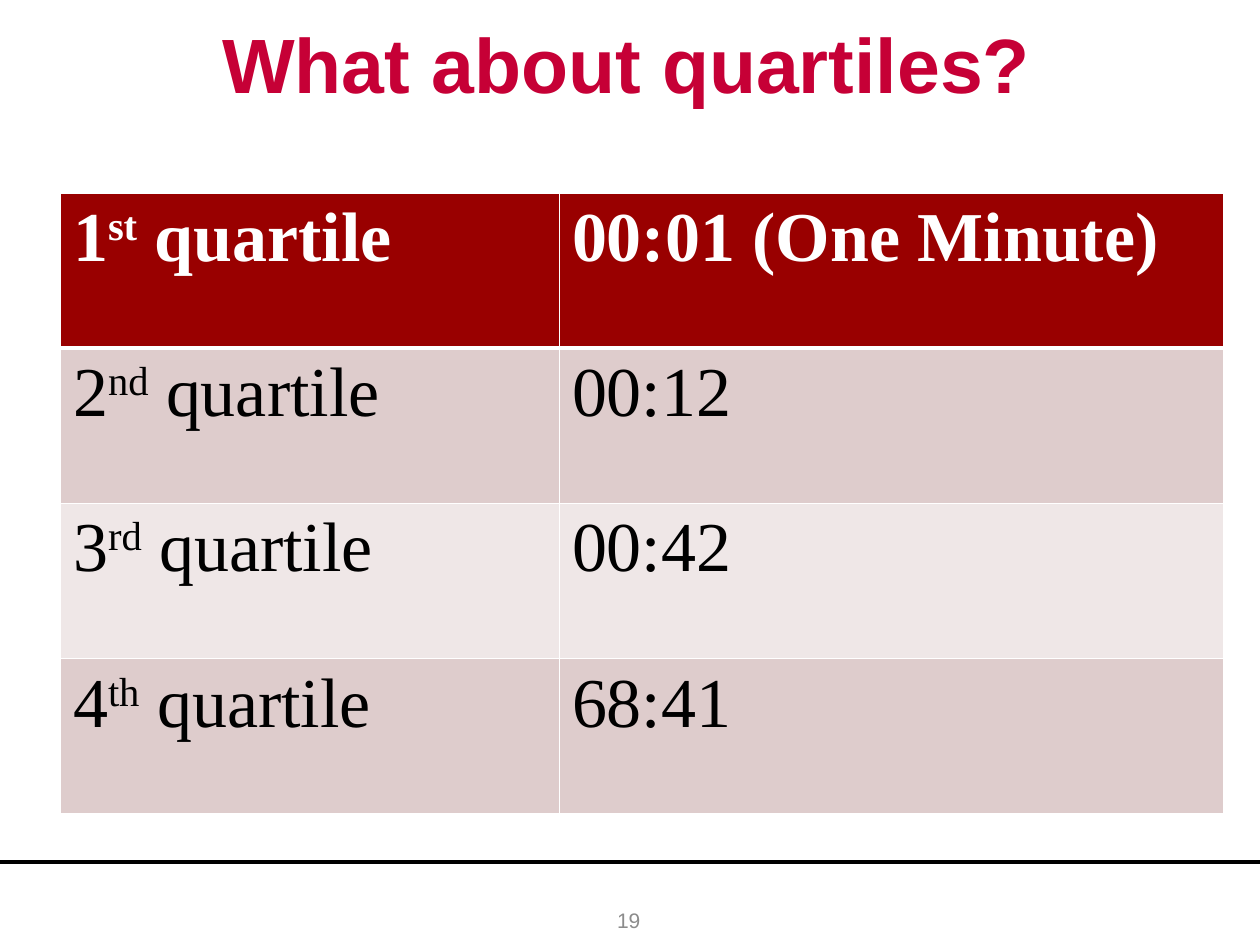
"""Build a slide with a table of quartile times."""
from lxml.etree import SubElement as Sub
from pptx import Presentation
from pptx.dml.color import RGBColor
from pptx.enum.shapes import MSO_CONNECTOR as Conn
from pptx.enum.text import MSO_ANCHOR as Anchor, PP_ALIGN as Align
from pptx.oxml.ns import qn
from pptx.util import Inches, Pt


def tint(color, code):
    color.rgb = RGBColor.from_string(code)


def write(para, text, style, code):
    run = para.add_run()
    run.text = text
    for key, value in style.items():
        setattr(run.font, key, value)
    tint(run.font.color, code)
    return run


deck = Presentation()
deck.slide_width, deck.slide_height = Inches(10), Inches(7.5)
slide = deck.slides.add_slide(deck.slide_layouts[5])
shapes = slide.shapes

rule = shapes.add_connector(Conn.STRAIGHT, 0, Inches(6.84), Inches(10), Inches(6.84))
rule.line.width = Pt(2.25)
tint(rule.line.color, "000000")
Sub(rule._element.spPr, qn("a:effectLst"))

title = shapes.title
title.left, title.top = Inches(-0.05), Inches(0)
title.width, title.height = Inches(10.05), Inches(1)
number = shapes.add_textbox(Inches(3.82), Inches(7.1), Inches(2.34), Inches(0.4))
labels = [
    (title, "What about quartiles?", {"name": "Arial", "size": Pt(44), "bold": True}, "C60036"),
    (number, "19", {"name": "Arial", "size": Pt(12)}, "8C8C8C"),
]
for box, text, style, code in labels:
    frame = box.text_frame
    frame.word_wrap = True
    frame.vertical_anchor = Anchor.MIDDLE
    para = frame.paragraphs[0]
    para.alignment = Align.CENTER
    write(para, text, style, code)

rows = [
    ("1", "st", "00:01 (One Minute)"),
    ("2", "nd", "00:12"),
    ("3", "rd", "00:42"),
    ("4", "th", "68:41"),
]
table = shapes.add_table(
    len(rows), 2, Inches(0.48), Inches(1.53), Inches(9.23), Inches(4.93)
).table
for col, width in zip(table.columns, (3.96, 5.27)):
    col.width = Inches(width)

for i, (rank, suffix, time) in enumerate(rows):
    head = i == 0
    fill = "990000" if head else ("EFE7E7", "DECCCC")[i % 2]
    ink = "FFFFFF" if head else "000000"
    style = {"name": "Times New Roman", "size": Pt(40), "bold": head}
    for j, parts in enumerate([(rank, suffix, " quartile"), (time,)]):
        cell = table.cell(i, j)
        props = cell._tc.get_or_add_tcPr()
        for side in "LRTB":
            thick = (head and side == "B") or (i == 1 and side == "T")
            edge = Sub(props, qn(f"a:ln{side}"), w=str(Pt(3 if thick else 1)))
            Sub(Sub(edge, qn("a:solidFill")), qn("a:srgbClr"), val="FFFFFF")
        cell.fill.solid()
        tint(cell.fill.fore_color, fill)
        for part in parts:
            run = write(cell.text_frame.paragraphs[0], part, style, ink)
            if part == suffix:
                run.font._element.set("baseline", "30000")

deck.save("out.pptx")
